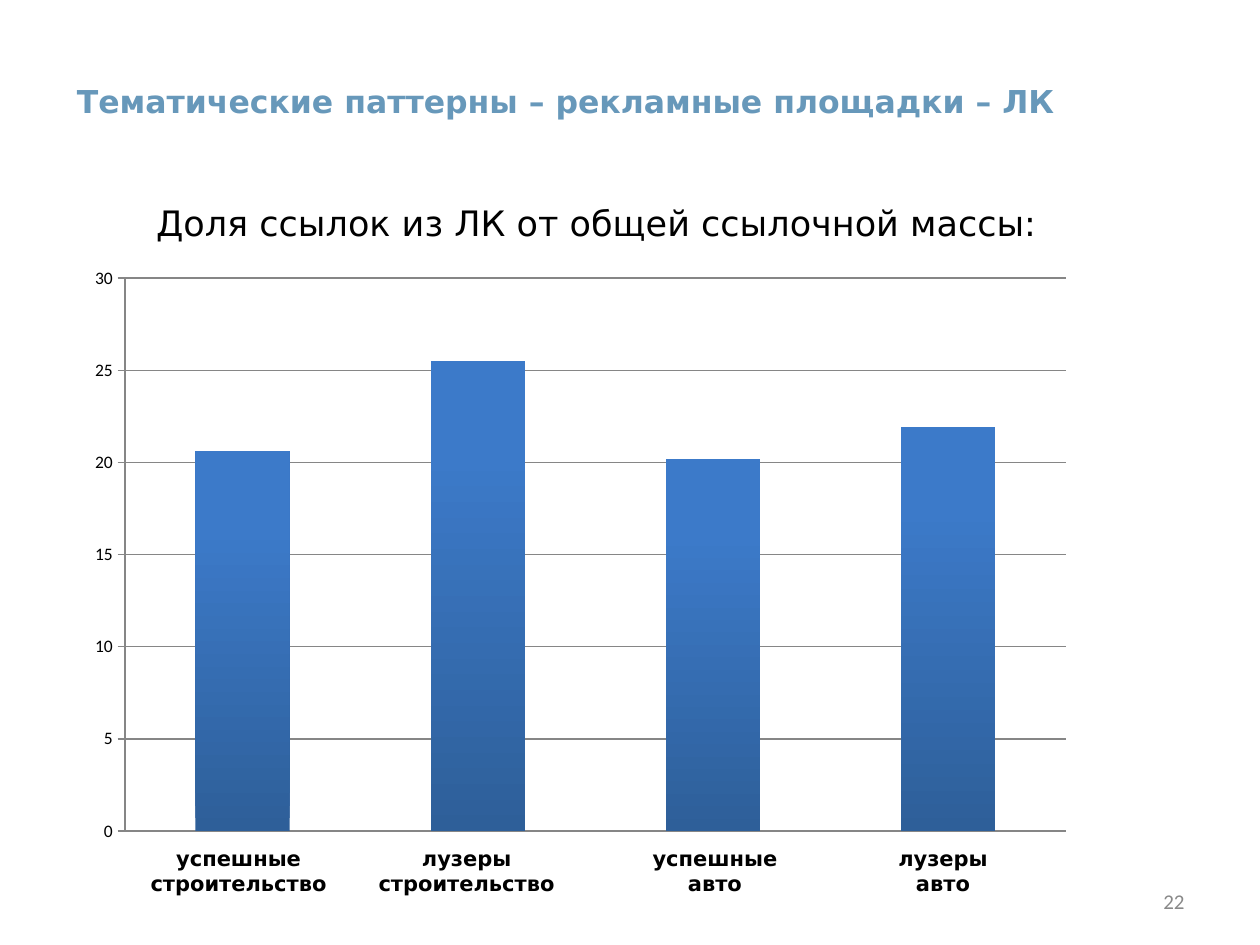
from dataclasses import dataclass

from pptx import Presentation
from pptx.chart.data import CategoryChartData
from pptx.dml.color import RGBColor
from pptx.enum import chart as charts, text
from pptx.oxml import parse_xml
from pptx.oxml.ns import nsdecls
from pptx.util import Pt


@dataclass(frozen=True)
class Theme:
    heading: RGBColor = RGBColor(0x67, 0x98, 0xBA)
    ink: RGBColor = RGBColor(0, 0, 0)
    number: RGBColor = RGBColor(0x89, 0x89, 0x89)
    grid: RGBColor = RGBColor(0x86, 0x86, 0x86)
    bar_bottom: RGBColor = RGBColor(0x2E, 0x5F, 0x99)
    bar_top: RGBColor = RGBColor(0x3C, 0x7A, 0xC9)
    face: str = "DejaVu Sans"
    chart_face: str = "Calibri"
    title_size: int = 18
    subtitle_size: int = 20
    label_size: int = 12
    axis_size: int = 10


THEME = Theme()

# Bar captions: left edge in points and wording
CAPTIONS = [
    (65.5, "успешные\vстроительство"),
    (195.8, "лузеры\vстроительство"),
    (337.7, "успешные\vавто"),
    (468, "лузеры\vавто"),
]
SHARES = [20.6, 25.5, 20.2, 21.9]


def write(box, wording, size, color=THEME.ink, face=THEME.face, bold=False,
          align=text.PP_ALIGN.LEFT, anchor=text.MSO_ANCHOR.TOP, wrap=True):
    """Fill a box with one paragraph in a single style."""
    frame = box.text_frame
    frame.text = wording
    frame.word_wrap = wrap
    frame.auto_size = text.MSO_AUTO_SIZE.NONE
    frame.vertical_anchor = anchor
    para = frame.paragraphs[0]
    para.alignment = align
    font = para.font
    font.name, font.size, font.bold = face, Pt(size), bold
    font.color.rgb = color


def add_title(page, wording):
    title = page.shapes.title
    title.left, title.top = Pt(36.7), Pt(43.2)
    title.width, title.height = Pt(578.9), Pt(28.8)
    write(title, wording, THEME.title_size, THEME.heading, bold=True, wrap=False)


def add_text(page, left, top, width, height, wording, size, **style):
    box = page.shapes.add_textbox(Pt(left), Pt(top), Pt(width), Pt(height))
    write(box, wording, size, **style)


def set_plot_area(chart, x, y, w, h):
    """Fix the inner plot area, as fractions of the chart."""
    plot_area = chart._chartSpace.chart.plotArea
    for old in plot_area.findall("{*}layout"):
        plot_area.remove(old)
    sizes = "".join(f'<c:{key} val="{value}"/>'
                    for key, value in zip("xywh", (x, y, w, h)))
    plot_area.insert(0, parse_xml(
        f'<c:layout {nsdecls("c")}><c:manualLayout>'
        '<c:layoutTarget val="inner"/><c:xMode val="edge"/><c:yMode val="edge"/>'
        f'{sizes}</c:manualLayout></c:layout>'))


def add_share_chart(page):
    data = CategoryChartData()
    data.categories = [str(i) for i in range(1, len(SHARES) + 1)]
    data.add_series("Series 1", SHARES)
    chart = page.shapes.add_chart(
        charts.XL_CHART_TYPE.COLUMN_CLUSTERED,
        Pt(42.5), Pt(145.4), Pt(578.2), Pt(339.8), data).chart
    chart.has_legend = False
    chart.has_title = False
    chart.font.name = THEME.chart_face
    chart.font.size = Pt(THEME.axis_size)
    chart.font.color.rgb = THEME.ink
    set_plot_area(chart, 0.05, 0.04, 0.93, 0.93)

    # Axes
    chart.category_axis.visible = False
    axis = chart.value_axis
    axis.minimum_scale, axis.maximum_scale, axis.major_unit = 0, 30, 5
    axis.major_tick_mark = charts.XL_TICK_MARK.OUTSIDE
    axis.has_major_gridlines = True
    for line in (axis.format.line, axis.major_gridlines.format.line):
        line.color.rgb = THEME.grid
        line.width = Pt(0.75)

    # Bars
    plot = chart.plots[0]
    plot.gap_width = 150
    plot.vary_by_categories = False
    series = plot.series[0]
    series.invert_if_negative = False
    fill = series.format.fill
    fill.gradient()
    fill.gradient_angle = 90
    stops = ((0, THEME.bar_bottom), (0.8, THEME.bar_top))
    for stop, (position, color) in zip(fill.gradient_stops, stops):
        stop.position = position
        stop.color.rgb = color


def main():
    deck = Presentation()
    deck.slide_width, deck.slide_height = Pt(720), Pt(540)
    page = deck.slides.add_slide(deck.slide_layouts[5])

    # Headings
    add_title(page, "Тематические паттерны – рекламные площадки – ЛК")
    add_text(page, 82.1, 111.6, 517.7, 31.7,
             "Доля ссылок из ЛК от общей ссылочной массы:",
             THEME.subtitle_size, wrap=False)

    # Chart with its captions
    add_share_chart(page)
    for left, wording in CAPTIONS:
        add_text(page, left, 479.5, 141.8, 36, wording, THEME.label_size,
                 bold=True, align=text.PP_ALIGN.CENTER)

    # Page number
    add_text(page, 516.2, 500.4, 167.8, 28.8, "22", THEME.label_size,
             color=THEME.number, face=THEME.chart_face,
             align=text.PP_ALIGN.RIGHT, anchor=text.MSO_ANCHOR.MIDDLE)

    deck.save("out.pptx")


if __name__ == "__main__":
    main()
